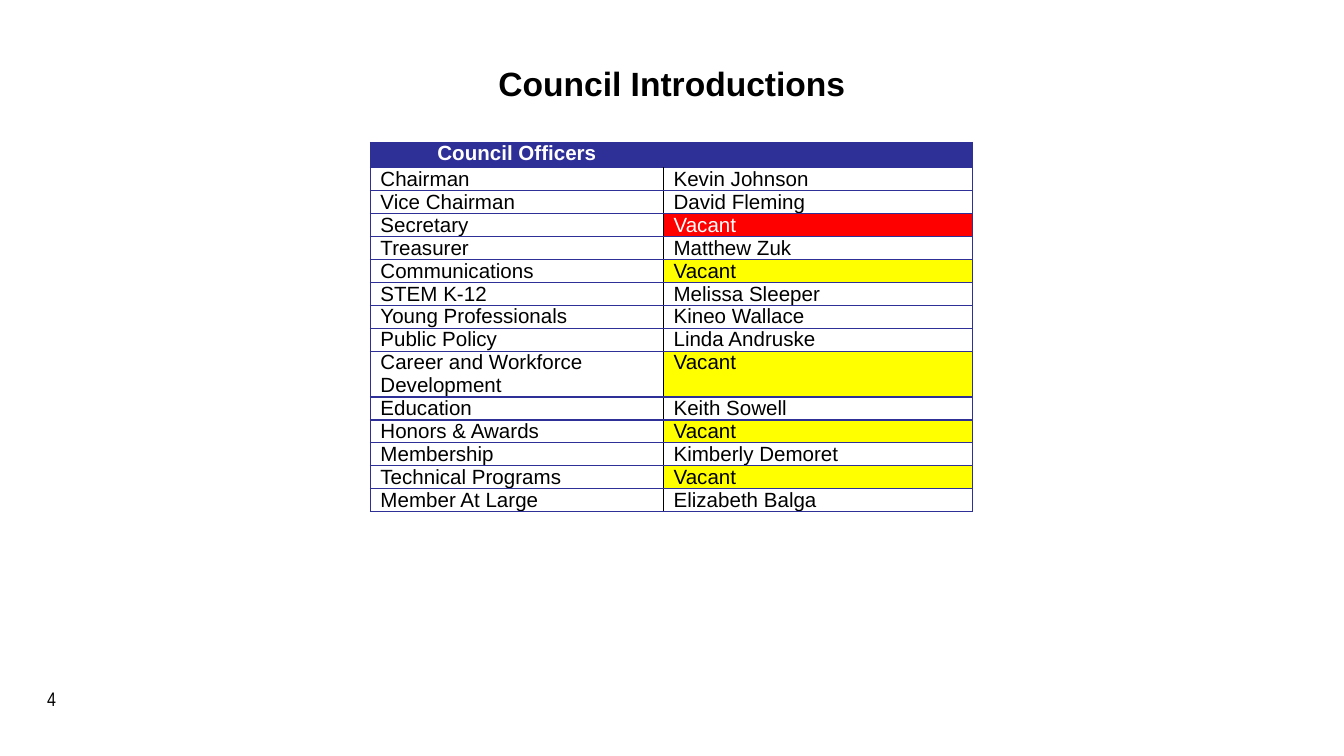
from lxml import etree
from pptx import Presentation
from pptx.dml.color import RGBColor
from pptx.enum.text import MSO_ANCHOR as Anchor, PP_ALIGN as Align
from pptx.oxml.ns import qn
from pptx.util import Cm, Pt

NAVY, BLACK, WHITE = "2F2F98", "000000", "FFFFFF"
RED, YELLOW = "FF0000", "FFFF00"


def write_text(frame, text, size=11, font="Arial", color=BLACK, bold=False, align=Align.LEFT):
    paragraph = frame.paragraphs[0]
    paragraph.alignment = align
    if not text:
        # An empty cell keeps its row low only with a small end mark
        etree.SubElement(paragraph._p, qn("a:endParaRPr"), sz=str(size * 100))
        return
    run = paragraph.add_run()
    run.text = text
    run.font.size = Pt(size)
    run.font.name = font
    run.font.bold = bold
    run.font.color.rgb = RGBColor.from_string(color)


def set_borders(cell, borders):
    properties = cell._tc.get_or_add_tcPr()
    for side in ("L", "R", "T", "B"):
        color, width = borders[side]
        line = etree.SubElement(properties, qn(f"a:ln{side}"), w=str(Pt(width)))
        if width:
            fill = etree.SubElement(line, qn("a:solidFill"))
            etree.SubElement(fill, qn("a:srgbClr"), val=color)
        else:
            etree.SubElement(line, qn("a:noFill"))


presentation = Presentation()
presentation.slide_width = Cm(25.4)
presentation.slide_height = Cm(14.28)
slide = presentation.slides.add_slide(presentation.slide_layouts[5])

# Title
title = slide.shapes.title
title.left, title.top, title.width, title.height = Cm(1.9), Cm(0.86), Cm(21.6), Cm(1.42)
title.text_frame.vertical_anchor = Anchor.MIDDLE
write_text(title.text_frame, "Council Introductions", size=18, bold=True, align=Align.CENTER)

# Officers table: position, holder and highlight of open positions
officers = [
    ("Council Officers", "", NAVY),
    ("Chairman", "Kevin Johnson", None),
    ("Vice Chairman", "David Fleming", None),
    ("Secretary", "Vacant", RED),
    ("Treasurer", "Matthew Zuk", None),
    ("Communications", "Vacant", YELLOW),
    ("STEM K-12", "Melissa Sleeper", None),
    ("Young Professionals", "Kineo Wallace", None),
    ("Public Policy", "Linda Andruske", None),
    ("Career and Workforce Development", "Vacant", YELLOW),
    ("Education", "Keith Sowell", None),
    ("Honors & Awards", "Vacant", YELLOW),
    ("Membership", "Kimberly Demoret", None),
    ("Technical Programs", "Vacant", YELLOW),
    ("Member At Large", "Elizabeth Balga", None),
]
row_height = Cm(0.43)
table = slide.shapes.add_table(
    len(officers), 2, Cm(7), Cm(2.69), Cm(11.38), row_height * len(officers)
).table
table.first_row = table.horz_banding = False
table.columns[0].width, table.columns[1].width = Cm(5.54), Cm(5.84)

for row, (position, holder, highlight) in enumerate(officers):
    table.rows[row].height = row_height
    header = row == 0
    for column, text in enumerate((position, holder)):
        cell = table.cell(row, column)
        cell.margin_left = cell.margin_right = Cm(0.19)
        cell.margin_top = cell.margin_bottom = 0

        outer, inner = (NAVY, 0.75), (BLACK, 0 if header else 1)
        left, right = (outer, inner) if column == 0 else (inner, outer)
        set_borders(cell, {"L": left, "R": right, "T": outer, "B": outer})

        filled = highlight and (header or column == 1)
        if filled:
            cell.fill.solid()
            cell.fill.fore_color.rgb = RGBColor.from_string(highlight)
        else:
            cell.fill.background()
        write_text(
            cell.text_frame, text, bold=header,
            color=WHITE if filled and highlight != YELLOW else BLACK,
            align=Align.CENTER if header else Align.LEFT,
        )

# Page number
number_box = slide.shapes.add_textbox(Cm(0.64), Cm(12.85), Cm(2.54), Cm(0.48))
number_box.text_frame.word_wrap = True
write_text(number_box.text_frame, "4", size=10.5, font="Arial Narrow")

presentation.save("out.pptx")
